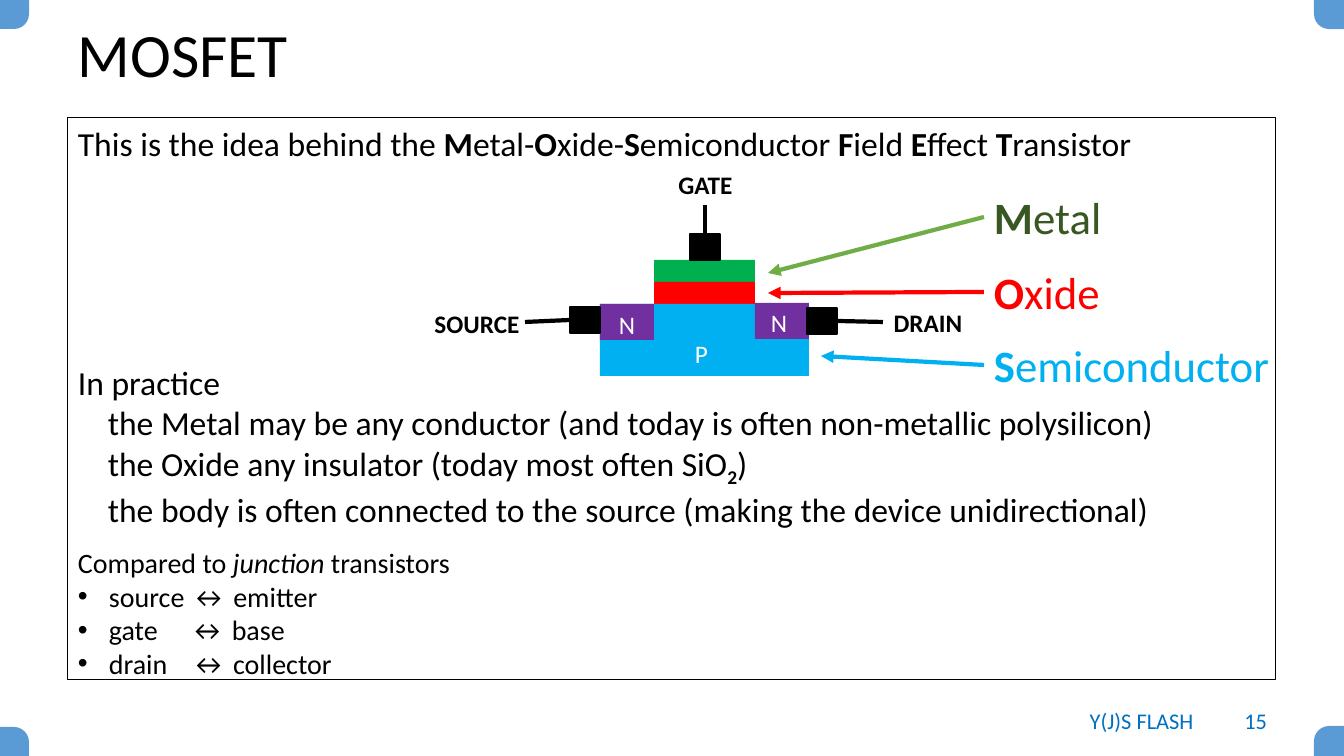
from lxml import etree
from pptx import Presentation, util as u
from pptx.dml.color import RGBColor
from pptx.enum import shapes, text
from pptx.oxml.ns import qn

SCALE = 914400 / 100.8  # EMU in one px
FONT = "Calibri"
BLACK, WHITE, RED, SKY = "000000", "FFFFFF", "FF0000", "00B0F0"
LEFT, CENTER, RIGHT = text.PP_ALIGN.LEFT, text.PP_ALIGN.CENTER, text.PP_ALIGN.RIGHT
TOP, MIDDLE = text.MSO_ANCHOR.TOP, text.MSO_ANCHOR.MIDDLE


def px(length):
    return u.Emu(round(length * SCALE))


def color(hex_value):
    return RGBColor.from_string(hex_value)


def add_block(slide, box, fill=None, line=None, width=1,
              kind=shapes.MSO_SHAPE.RECTANGLE):
    shape = slide.shapes.add_shape(kind, *map(px, box))
    shape.shadow.inherit = False
    if fill:
        shape.fill.solid()
        shape.fill.fore_color.rgb = color(fill)
    else:
        shape.fill.background()
    if line:
        shape.line.color.rgb = color(line)
        shape.line.width = u.Pt(width)
    else:
        shape.line.fill.background()
    return shape


def add_corner(slide, left, top, rotation):
    corner = add_block(slide, (left, top, 30, 30), "5B9BD5",
                       kind=shapes.MSO_SHAPE.ROUND_1_RECTANGLE)
    corner.adjustments[0] = 0.5
    corner.rotation = rotation


def add_label(slide, box, words, size, hex_value, bold=False, align=LEFT,
              anchor=TOP, wrap=True):
    label = slide.shapes.add_textbox(*map(px, box))
    frame = label.text_frame
    frame.text = words
    frame.word_wrap = wrap
    frame.vertical_anchor = anchor
    paragraph = frame.paragraphs[0]
    paragraph.alignment = align
    style_run(paragraph.runs[0], size, hex_value, bold)
    return paragraph


def style_run(run, size, hex_value=BLACK, bold=False):
    run.font.name = FONT
    run.font.size = u.Pt(size)
    run.font.bold = bold
    run.font.color.rgb = color(hex_value)


def add_layer_name(slide, top, width, name, hex_value):
    """Layer name with its initial in bold."""
    paragraph = add_label(slide, (984, top, width, 64), name[0], 32, hex_value, True)
    rest = paragraph.add_run()
    rest.text = name[1:]
    style_run(rest, 32, hex_value)


def add_line(slide, start, end, hex_value, arrow=False):
    line = slide.shapes.add_connector(shapes.MSO_CONNECTOR.STRAIGHT,
                                      *map(px, start + end))
    line.line.color.rgb = color(hex_value)
    line.line.width = u.Pt(3)
    properties = line._element.spPr
    if arrow:
        etree.SubElement(line.line._get_or_add_ln(), qn("a:tailEnd"), type="triangle")
    etree.SubElement(properties, qn("a:effectLst"))
    return line


def add_paragraph(frame, pieces, size=24, before=0, indent=0, bullet=False):
    """Write (words, style) pieces; styles are bold, italic, sub or a gap in points."""
    first = frame.paragraphs[0]
    paragraph = frame.add_paragraph() if first.runs else first
    paragraph.alignment = LEFT
    paragraph.space_before = u.Pt(before)
    properties = paragraph._p.get_or_add_pPr()
    properties.set("marL", str(px(indent)))
    properties.set("indent", str(px(-indent if bullet else 0)))
    if bullet:
        etree.SubElement(properties, qn("a:buFont"), typeface="Arial")
        etree.SubElement(properties, qn("a:buChar"), char="•")
    for words, style in pieces:
        run = paragraph.add_run()
        run.text = words
        style_run(run, size, bold=style in ("bold", "sub"))
        if style == "italic":
            run.font.italic = True
        elif style == "sub":
            run.font._element.set("baseline", "-25000")
        elif isinstance(style, int):
            run.font._element.set("spc", str(style * 100))


def add_body(slide):
    frame = add_block(slide, (68, 118, 1208, 562), line=BLACK, width=0.75).text_frame
    frame.word_wrap = True
    frame.vertical_anchor = TOP
    add_paragraph(frame, [
        ("This is the idea behind the ", ""), ("M", "bold"), ("etal-", ""),
        ("O", "bold"), ("xide-", ""), ("S", "bold"), ("emiconductor ", ""),
        ("F", "bold"), ("ield ", ""), ("E", "bold"), ("ffect ", ""),
        ("T", "bold"), ("ransistor", "")], before=6)
    # The space before this paragraph leaves room for the diagram
    add_paragraph(frame, [("In practice", "")], before=142)
    for pieces in (
        [("the Metal may be any conductor (and today is often non-metallic polysilicon)", "")],
        [("the Oxide any insulator (today most often SiO", ""), ("2", "sub"), (")", "")],
        [("the body is often connected to the source (making the device unidirectional)", "")],
    ):
        add_paragraph(frame, pieces, indent=30)
    add_paragraph(frame, [("Compared to ", ""), ("junction", "italic"),
                          (" transistors", "")], size=20, before=12)
    # Widened spaces line up the arrows
    for terminal, gap, counterpart in (("source", 0, "emitter"), ("gate", 18, "base"),
                                       ("drain", 12, "collector")):
        add_paragraph(frame, [(terminal, ""), (" ", gap), (f"↔ {counterpart}", "")],
                      size=20, indent=31, bullet=True)


def add_transistor(slide):
    # Layers and doped regions
    for box, fill in (
        ((654, 260, 101, 22), "00B050"),
        ((654, 282, 101, 22), RED),
        ((600, 304, 209, 72), SKY),
        ((600, 304, 54, 36), "7030A0"),
        ((755, 303, 54, 36), "7030A0"),
    ):
        add_block(slide, box, fill)

    # Contacts, each with a lead from the middle of one side
    for corner, side, start, end in (
        ((690, 234), 0, (705, 234), (705, 205)),
        ((570, 307), 1, (570, 320), (525, 322)),
        ((807, 308), 3, (837, 321), (883, 322)),
    ):
        contact = add_block(slide, corner + (30, 26), BLACK, BLACK)
        add_line(slide, start, end, BLACK).begin_connect(contact, side)

    # Terminal and region names
    for box, name in (((662, 164, 87, 40), "GATE"), ((422, 303, 110, 40), "SOURCE"),
                      ((873, 302, 110, 40), "DRAIN")):
        add_label(slide, box, name, 18, BLACK, True, CENTER)
    for box, name in (((609, 304, 36, 40), "N"), ((761, 302, 36, 40), "N"),
                      ((685, 333, 33, 40), "P")):
        add_label(slide, box, name, 18, WHITE, wrap=False)

    # Layer names with arrows to the layers
    for name, top, width, hex_value, arrow_color, start, end in (
        ("Metal", 185, 159, "385723", "70AD47", (984, 217), (768, 273)),
        ("Oxide", 260, 135, RED, RED, (984, 292), (768, 293)),
        ("Semiconductor", 333, 306, SKY, SKY, (984, 365), (821, 356)),
    ):
        add_layer_name(slide, top, width, name, hex_value)
        add_line(slide, start, end, arrow_color, arrow=True)


def main():
    presentation = Presentation()
    presentation.slide_width, presentation.slide_height = px(1344), px(756)
    slide = presentation.slides.add_slide(presentation.slide_layouts[6])

    # Corner marks
    for left, top, rotation in ((-1, -1, 90), (1314, -1, 180),
                                (-1, 727, 0), (1314, 726, 270)):
        add_corner(slide, left, top, rotation)

    # Title, body and diagram
    title = add_label(slide, (68, 21, 1208, 73), "MOSFET", 44, BLACK, anchor=MIDDLE)
    title.line_spacing = 0.9
    add_body(slide)
    add_transistor(slide)

    # Footer
    add_label(slide, (1066, 701, 151, 40), "Y(J)S FLASH", 16, "0070C0",
              align=CENTER, anchor=MIDDLE)
    add_label(slide, (1209, 701, 68, 40), "15", 16, "0070C0",
              align=RIGHT, anchor=MIDDLE)

    presentation.save("out.pptx")


if __name__ == "__main__":
    main()
